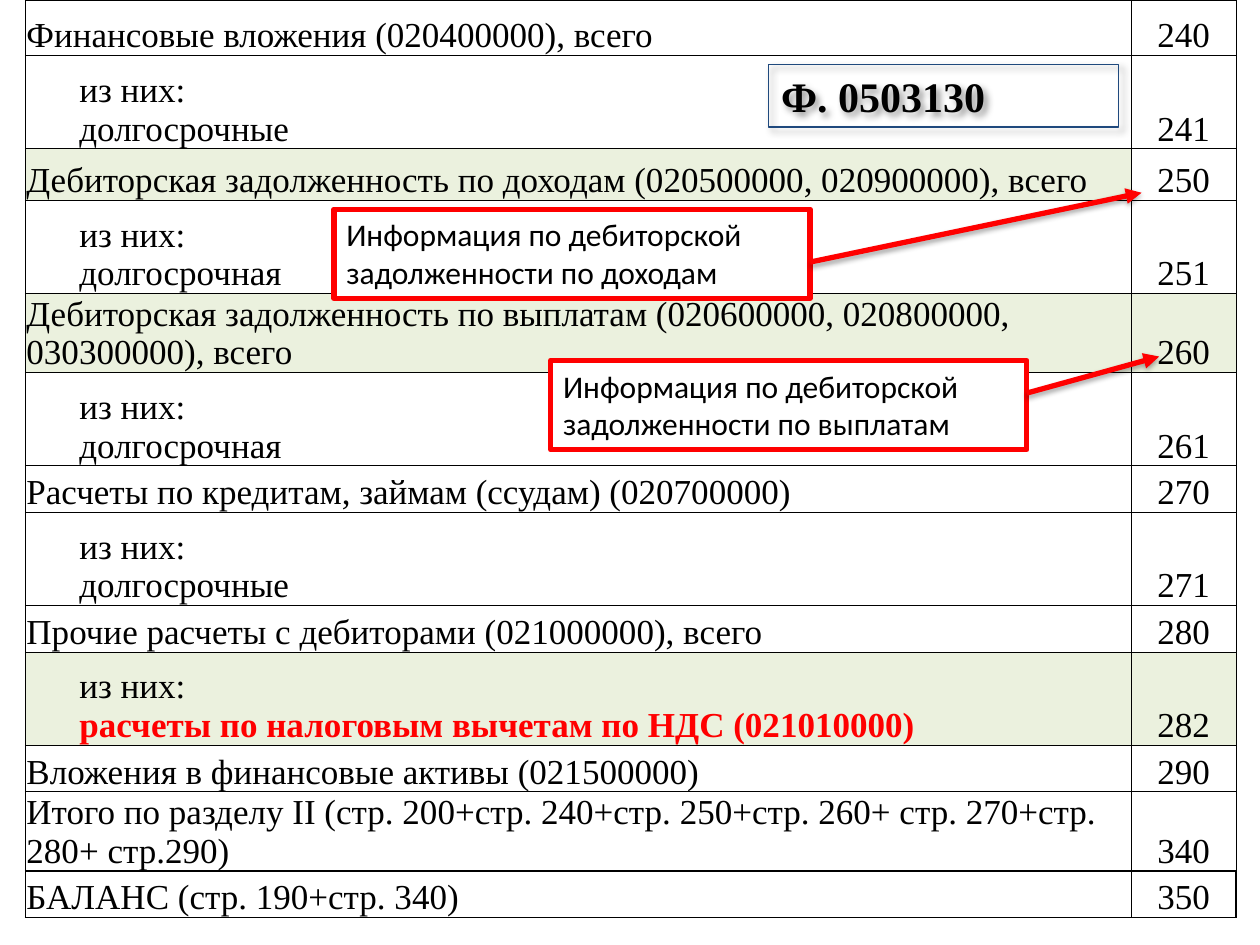
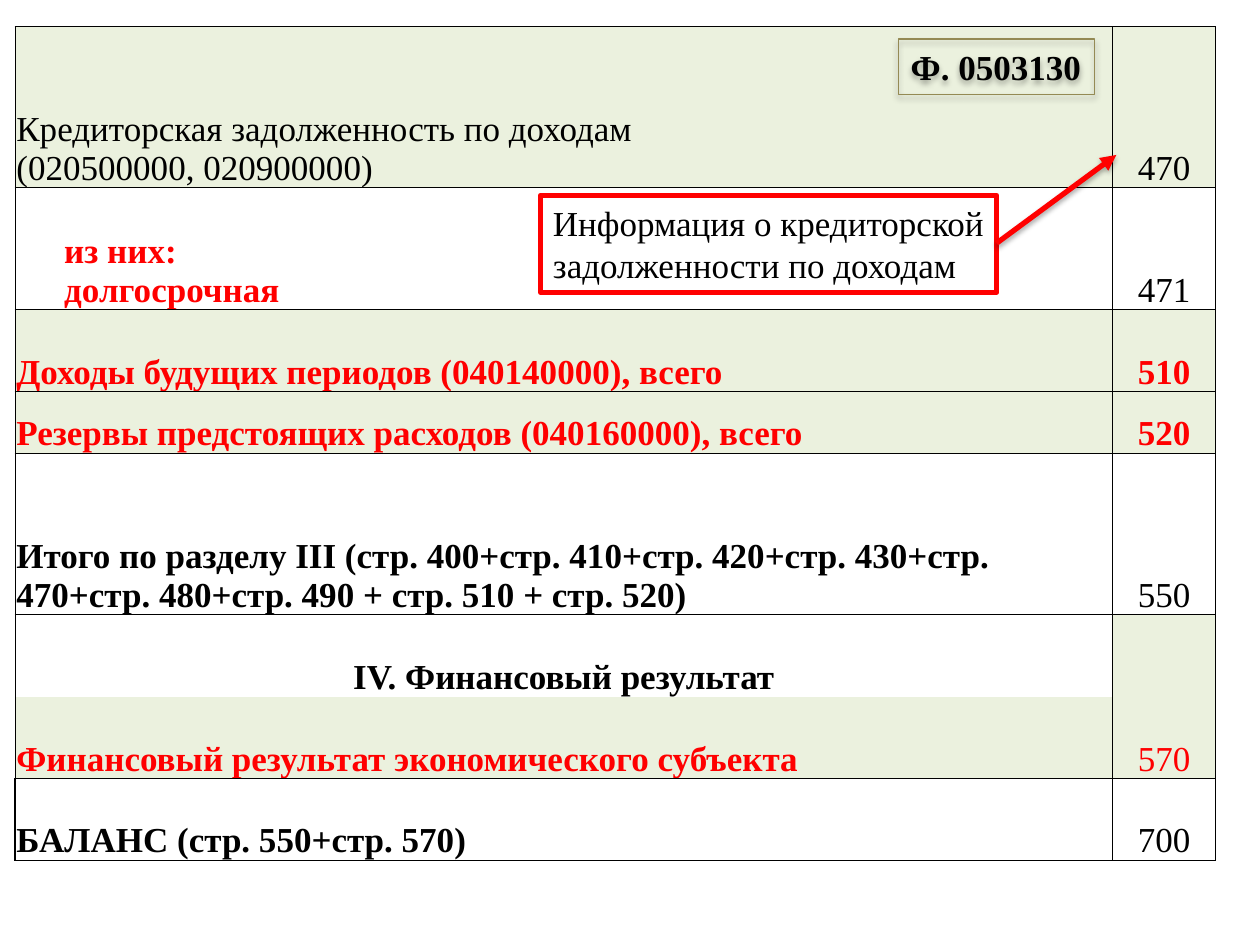
from dataclasses import dataclass

from lxml import etree
from pptx import Presentation
from pptx.dml.color import RGBColor
from pptx.enum.shapes import MSO_CONNECTOR, MSO_SHAPE
from pptx.enum.text import MSO_ANCHOR, MSO_AUTO_SIZE, PP_ALIGN
from pptx.oxml.ns import qn
from pptx.util import Inches, Pt

RECTANGLE = MSO_SHAPE.RECTANGLE
STRAIGHT = MSO_CONNECTOR.STRAIGHT
LEFT, CENTER = PP_ALIGN.LEFT, PP_ALIGN.CENTER
TOP, BOTTOM = MSO_ANCHOR.TOP, MSO_ANCHOR.BOTTOM
FIT_SHAPE = MSO_AUTO_SIZE.SHAPE_TO_FIT_TEXT

SLIDE_WIDTH, SLIDE_HEIGHT = Inches(10), Inches(7.5)
GRID_COLUMNS = 100
BLACK, RED, WHITE, GREEN = "000000", "FF0000", "FFFFFF", "EBF1DE"
NAVY, OLIVE = "1F497D", "948A54"
SERIF, SANS = "Times New Roman", "Calibri"
PLAIN, BOLD = (BLACK, False), (BLACK, True)
RED_PLAIN, RED_BOLD = (RED, False), (RED, True)
THIN, THICK = 0.5, 1
ARROW_SHADOW = (35, 3.1, 1.8, 90)
FORM_NAME = "Ф. 0503130"


@dataclass
class Entry:
    height: float
    label: str
    code: str
    style: tuple = PLAIN
    code_style: tuple = PLAIN
    last_line_style: tuple = None
    label_fill: str = None
    code_fill: str = None
    indent: float = 0.1
    align: object = LEFT
    open_top: bool = False
    open_bottom: bool = False


def grid(units):
    return round(units * SLIDE_WIDTH / GRID_COLUMNS)


def color(value):
    return RGBColor.from_string(value)


def set_fill(fill, value):
    if value:
        fill.solid()
        fill.fore_color.rgb = color(value)
    else:
        fill.background()


def add_run(paragraph, text, font, size, style):
    run = paragraph.add_run()
    run.text = text
    run.font.name = font
    run.font.size = Pt(size)
    run.font.color.rgb, run.font.bold = color(style[0]), style[1]


def add_shadow(shape, shadow):
    properties = shape._element.spPr
    effects = properties.find(qn("a:effectLst"))
    if effects is None:
        effects = etree.SubElement(properties, qn("a:effectLst"))
    opacity, blur, distance, angle = shadow
    outer = etree.SubElement(
        effects, qn("a:outerShdw"), blurRad=str(Pt(blur)), dist=str(Pt(distance)),
        dir=str(angle * 60000), algn="tl", rotWithShape="0")
    tint = etree.SubElement(outer, qn("a:srgbClr"), val=BLACK)
    etree.SubElement(tint, qn("a:alpha"), val=str(opacity * 1000))


def set_borders(cell, widths):
    properties = cell._tc.get_or_add_tcPr()
    for side in "LRTB":
        width = widths[side]
        line = etree.SubElement(properties, qn("a:ln" + side), w=str(Pt(width)))
        if width:
            fill = etree.SubElement(line, qn("a:solidFill"))
            etree.SubElement(fill, qn("a:srgbClr"), val=BLACK)
        else:
            etree.SubElement(line, qn("a:noFill"))


def fill_cell(cell, text, style, last_style, align, indent, fill, widths):
    set_borders(cell, widths)
    set_fill(cell.fill, fill)
    cell.vertical_anchor = BOTTOM
    cell.margin_left, cell.margin_right = grid(indent), grid(0.1)
    cell.margin_top, cell.margin_bottom = grid(0.1), 0
    paragraph = cell.text_frame.paragraphs[0]
    paragraph.alignment = align
    lines = text.split("\n")
    for index, line in enumerate(lines):
        if index:
            paragraph.add_line_break()
        is_last = index == len(lines) - 1
        add_run(paragraph, line, SERIF, 20, last_style if last_style and is_last else style)


def row_borders(entries, index):
    last = len(entries) - 1
    entry = entries[index]
    widths = dict.fromkeys("LRTB", THICK if index == last else THIN)
    if index == last - 1:
        widths["B"] = THICK
    if entry.open_top:
        widths["T"] = 0
    if entry.open_bottom:
        widths["B"] = 0
    return widths


def add_balance_table(slide, left, top, column_widths, entries, thin_edge):
    frame = slide.shapes.add_table(
        len(entries), 2, grid(left), grid(top), grid(sum(column_widths)),
        grid(sum(entry.height for entry in entries)))
    table = frame.table
    table.first_row = table.horz_banding = False
    for column, width in zip(table.columns, column_widths):
        column.width = grid(width)
    for index, entry in enumerate(entries):
        table.rows[index].height = grid(entry.height)
        label_widths = row_borders(entries, index)
        code_widths = dict(label_widths)
        if index == len(entries) - 1:
            (label_widths, code_widths)[thin_edge[0]][thin_edge[1]] = THIN
        fill_cell(table.cell(index, 0), entry.label, entry.style, entry.last_line_style,
                  entry.align, entry.indent, entry.label_fill, label_widths)
        if entry.code:
            fill_cell(table.cell(index, 1), entry.code, entry.code_style, None,
                      CENTER, 0.1, entry.code_fill, code_widths)
        else:
            set_borders(table.cell(index, 1), code_widths)
            table.cell(index - 1, 1).merge(table.cell(index, 1))


def add_box(slide, box, text, font, size, style, line, line_width,
            fill=None, shadow=None, wrap=True):
    shape = slide.shapes.add_shape(RECTANGLE, *map(grid, box))
    shape.shadow.inherit = False
    set_fill(shape.fill, fill)
    shape.line.color.rgb = color(line)
    shape.line.width = Pt(line_width)
    if shadow:
        add_shadow(shape, shadow)
    frame = shape.text_frame
    frame.word_wrap = wrap
    frame.auto_size = FIT_SHAPE
    frame.vertical_anchor = TOP
    paragraph = frame.paragraphs[0]
    paragraph.alignment = LEFT
    add_run(paragraph, text, font, size, style)


def add_form_label(slide, box, size, line, shadow, wrap):
    add_box(slide, box, FORM_NAME, SERIF, size, BOLD, line, 0.75, None, shadow, wrap)


def add_callout(slide, box, text, font, size, fill=None):
    add_box(slide, box, text, font, size, PLAIN, RED, 3, fill)


def add_arrow(slide, start, end):
    arrow = slide.shapes.add_connector(STRAIGHT, *map(grid, start + end))
    arrow.line.color.rgb = color(RED)
    arrow.line.width = Pt(3)
    etree.SubElement(arrow.line._get_or_add_ln(), qn("a:tailEnd"), type="triangle")
    add_shadow(arrow, ARROW_SHADOW)


def add_assets_slide(presentation):
    slide = presentation.slides.add_slide(presentation.slide_layouts[6])
    nested = {"indent": 4.3}
    green_row = {"label_fill": GREEN, "code_fill": GREEN}
    entries = [
        Entry(4.4, "Финансовые вложения (020400000), всего", "240"),
        Entry(7.4, "из них: \nдолгосрочные", "241", **nested),
        Entry(4.1, "Дебиторская задолженность по доходам (020500000, 020900000), всего",
              "250", label_fill=GREEN),
        Entry(7.4, "из них: \nдолгосрочная", "251", **nested),
        Entry(3.7, "Дебиторская задолженность по выплатам (020600000, 020800000, "
              "030300000), всего", "260", **green_row),
        Entry(7.4, "из них: \nдолгосрочная", "261", **nested),
        Entry(3.7, "Расчеты по кредитам, займам (ссудам) (020700000)", "270"),
        Entry(7.4, "из них: \nдолгосрочные", "271", **nested),
        Entry(3.7, "Прочие расчеты с дебиторами (021000000), всего", "280"),
        Entry(7.4, "из них: \nрасчеты по налоговым вычетам по НДС (021010000)", "282",
              last_line_style=RED_BOLD, **nested, **green_row),
        Entry(3.7, "Вложения в финансовые активы (021500000)", "290"),
        Entry(3.9, "Итого по разделу II (стр. 200+стр. 240+стр. 250+стр. 260+ стр. 270+"
              "стр. 280+ стр.290)", "340"),
        Entry(3.7, "БАЛАНС (стр. 190+стр. 340)", "350"),
    ]
    add_balance_table(slide, 2, 0, (87.8, 8.3), entries, (0, "L"))
    add_form_label(slide, (61, 5.1, 27.8, 5), 24, NAVY, (40, 4, 3, 45), True)
    for left, top, subject in ((26.5, 16.6, "доходам"), (43.7, 28.6, "выплатам")):
        add_callout(slide, (left, top, 37.8, 7.1),
                    "Информация по дебиторской задолженности по " + subject, SANS, 18, WHITE)
    add_arrow(slide, (64.3, 20.8), (90.6, 15.3))
    add_arrow(slide, (81.5, 31.2), (92, 28.3))


def add_liabilities_slide(presentation):
    slide = presentation.slides.add_slide(presentation.slide_layouts[6])
    green_row = {"label_fill": GREEN, "code_fill": GREEN}
    red_row = {"style": RED_BOLD, "code_style": RED_BOLD, **green_row}
    entries = [
        Entry(12.8, "Кредиторская задолженность по доходам \n(020500000, 020900000)",
              "470", **green_row),
        Entry(9.7, "из них: \nдолгосрочная", "471", RED_BOLD, indent=3.9),
        Entry(6.5, "Доходы будущих периодов (040140000), всего", "510", **red_row),
        Entry(4.9, "Резервы предстоящих расходов (040160000), всего", "520", **red_row),
        Entry(12.8, "Итого по разделу III (стр. 400+стр. 410+стр. 420+стр. 430+стр. "
              "470+стр. 480+стр. 490 + стр. 510 + стр. 520)", "550", BOLD),
        Entry(6.5, "IV. Финансовый результат", "570", BOLD, RED_PLAIN,
              code_fill=GREEN, align=CENTER, open_bottom=True),
        Entry(6.5, "Финансовый результат экономического субъекта", "", RED_BOLD,
              label_fill=GREEN, open_top=True),
        Entry(6.5, "БАЛАНС (стр. 550+стр. 570)", "700", BOLD),
    ]
    add_balance_table(slide, 1.2, 2.1, (87.1, 8.2), entries, (1, "R"))
    add_form_label(slide, (71.3, 3.1, 15.6, 4.4), 20, OLIVE, (32, 3.5, 2.2, 90), False)
    add_callout(slide, (42.9, 15.5, 36.2, 7.7),
                "Информация о кредиторской задолженности по доходам", SERIF, 20)
    add_arrow(slide, (79.1, 19.3), (88.6, 12.3))


def main():
    presentation = Presentation()
    presentation.slide_width, presentation.slide_height = SLIDE_WIDTH, SLIDE_HEIGHT
    add_assets_slide(presentation)
    add_liabilities_slide(presentation)
    presentation.save("out.pptx")


if __name__ == "__main__":
    main()
